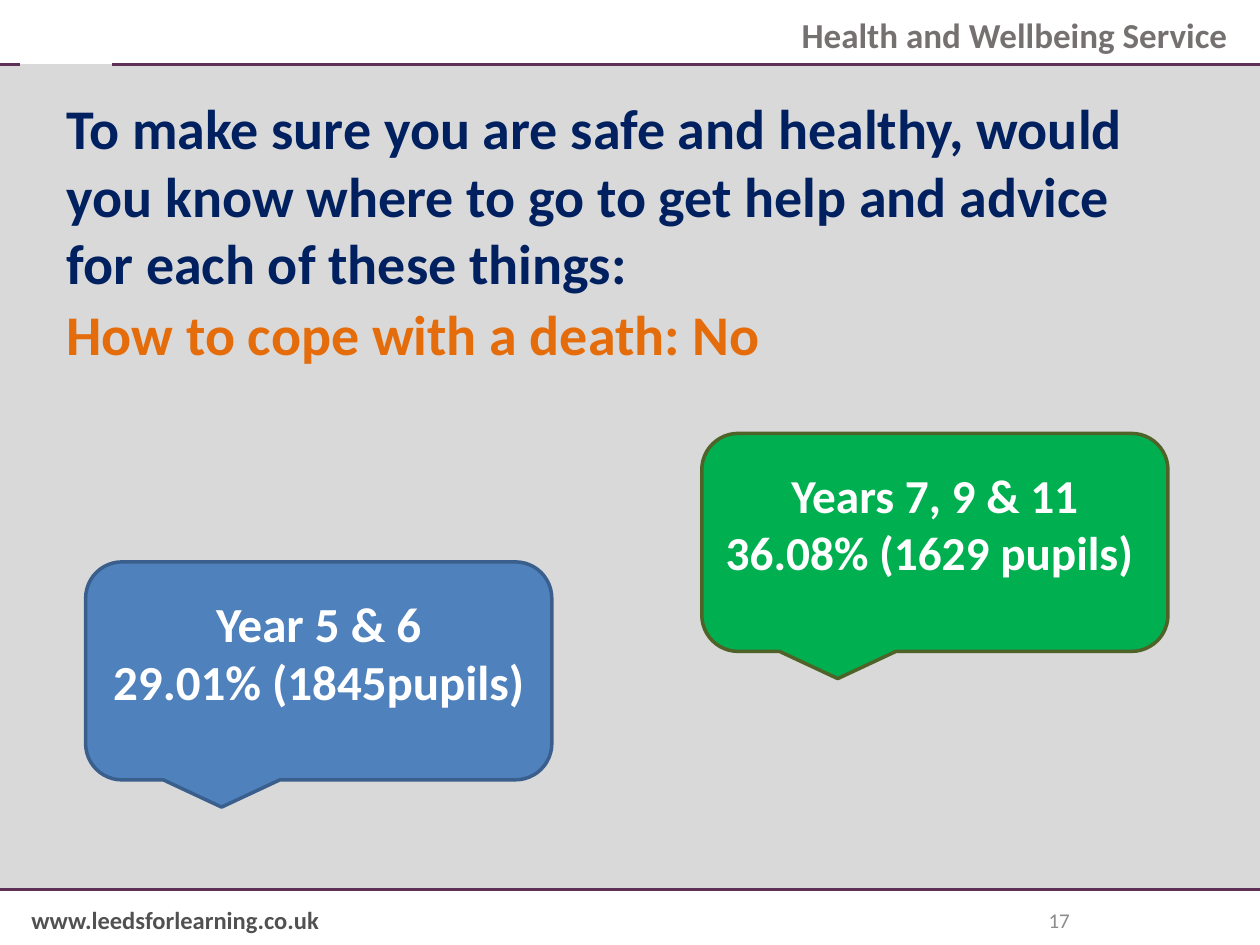
from dataclasses import dataclass
from typing import NamedTuple

import pptx
import pptx.dml.color
import pptx.enum.shapes
import pptx.enum.text
import pptx.util
from lxml import etree

Inches, Pt = pptx.util.Inches, pptx.util.Pt
RGB = pptx.dml.color.RGBColor.from_string
ALIGN = pptx.enum.text.PP_ALIGN
ANCHOR = pptx.enum.text.MSO_ANCHOR
SHAPE = pptx.enum.shapes.MSO_SHAPE

WIDTH, HEIGHT = 10, 7.5
BAND_TOP, BAND_BOTTOM = 0.51, 7.05
MARGIN = 0.43
CALLOUT_SIZE = (3.7, 1.73)


@dataclass(frozen=True)
class Theme:
    font: str = "Calibri"
    band: str = "D9D9D9"
    rule: str = "5F3056"
    service: str = "767171"
    site: str = "515151"
    number: str = "8C8C8C"
    title: str = "002060"
    answer: str = "E46C0A"
    white: str = "FFFFFF"
    heading_pt: int = 32
    service_pt: int = 20
    site_pt: int = 14
    number_pt: int = 12


class Box(NamedTuple):
    left: float
    top: float
    width: float
    height: float

    def emu(self) -> list:
        return [Inches(v) for v in self]


class Label(NamedTuple):
    text: str
    box: Box
    size: int
    color: str
    bold: bool = True
    align: ALIGN = ALIGN.LEFT
    anchor: ANCHOR = ANCHOR.TOP


class Callout(NamedTuple):
    lines: tuple
    left: float
    top: float
    fill: str
    line: str
    size: int


T = Theme()

LABELS = [
    Label("Health and Wellbeing Service", Box(5.55, 0.06, 4.29, 0.44),
          T.service_pt, T.service, align=ALIGN.RIGHT),
    Label("www.leedsforlearning.co.uk", Box(0.15, 7.13, 2.88, 0.34),
          T.site_pt, T.site),
    Label("To make sure you are safe and healthy, would you know where to go "
          "to get help and advice for each of these things:",
          Box(MARGIN, 0.92, 9, 1.25), T.heading_pt, T.title,
          anchor=ANCHOR.MIDDLE),
    Label("17", Box(6.26, 7.1, 2.33, 0.4), T.number_pt, T.number, bold=False,
          align=ALIGN.RIGHT, anchor=ANCHOR.MIDDLE),
    Label("How to cope with a death: No", Box(MARGIN, 2.33, 9, 4.95),
          T.heading_pt, T.answer),
]

CALLOUTS = [
    Callout(("Year 5 & 6", "29.01% (1845pupils) "), 0.68, 4.46,
            "4F81BD", "3A5F8C", 28),
    Callout(("Years 7, 9 & 11", "36.08% (1629 pupils) "), 5.57, 3.44,
            "00B050", "4F6228", 27),
]

# start x, end x, y; the gap in the top rule is the tab of the header
RULES = [(0.89, WIDTH, BAND_TOP), (0, 0.16, BAND_TOP), (0, WIDTH, 7.06)]


def write(tf, lines: tuple, size: int, color: str, bold: bool,
          align: ALIGN, anchor: ANCHOR) -> None:
    tf.word_wrap = True
    tf.vertical_anchor = anchor
    for i, line in enumerate(lines):
        p = tf.paragraphs[0] if i == 0 else tf.add_paragraph()
        p.alignment = align
        r = p.add_run()
        r.text = line
        for name, value in {"name": T.font, "size": Pt(size), "bold": bold}.items():
            setattr(r.font, name, value)
        r.font.color.rgb = RGB(color)


def add_band(s) -> None:
    box = Box(0, BAND_TOP, WIDTH, BAND_BOTTOM - BAND_TOP)
    sp = s.shapes.add_shape(SHAPE.RECTANGLE, *box.emu())
    sp.shadow.inherit = False
    sp.fill.solid()
    sp.fill.fore_color.rgb = RGB(T.band)
    sp.line.fill.background()


def add_rule(s, x1: float, x2: float, y: float) -> None:
    cx = s.shapes.add_connector(pptx.enum.shapes.MSO_CONNECTOR.STRAIGHT,
                                *(Inches(v) for v in (x1, y, x2, y)))
    cx.line.color.rgb = RGB(T.rule)
    cx.line.width = Pt(1.5)
    etree.SubElement(cx._element.spPr, pptx.oxml.ns.qn("a:effectLst"))


def add_label(s, label: Label) -> None:
    tf = s.shapes.add_textbox(*label.box.emu()).text_frame
    write(tf, (label.text,), label.size, label.color, label.bold,
          label.align, label.anchor)


def add_callout(s, c: Callout) -> None:
    sp = s.shapes.add_shape(SHAPE.ROUNDED_RECTANGULAR_CALLOUT,
                            *Box(c.left, c.top, *CALLOUT_SIZE).emu())
    sp.shadow.inherit = False
    sp.fill.solid()
    sp.fill.fore_color.rgb = RGB(c.fill)
    sp.line.color.rgb = RGB(c.line)
    sp.line.width = Pt(2)
    sp.text_frame.margin_bottom = Inches(0.35)
    write(sp.text_frame, c.lines, c.size, T.white, True,
          ALIGN.CENTER, ANCHOR.MIDDLE)


def main() -> None:
    prs = pptx.Presentation()
    prs.slide_width, prs.slide_height = Inches(WIDTH), Inches(HEIGHT)
    s = prs.slides.add_slide(prs.slide_layouts[6])
    add_band(s)
    for rule in RULES:
        add_rule(s, *rule)
    for label in LABELS:
        add_label(s, label)
    for callout in CALLOUTS:
        add_callout(s, callout)
    prs.save("out.pptx")


if __name__ == "__main__":
    main()
